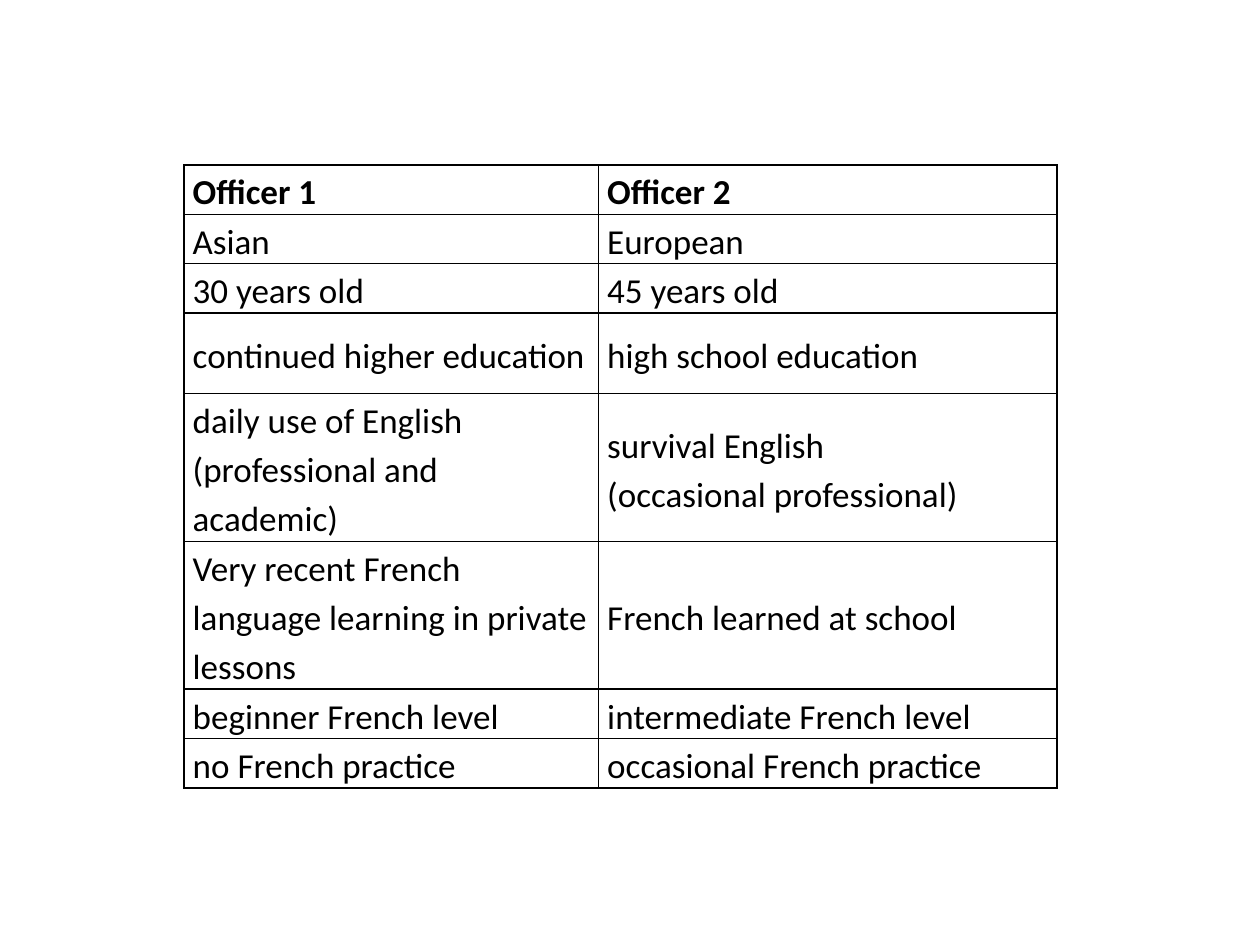
from lxml.etree import SubElement
from pptx import Presentation
from pptx.dml.color import RGBColor
from pptx.enum.text import MSO_ANCHOR
from pptx.oxml.ns import qn
from pptx.util import Inches, Pt

BLACK = RGBColor(0, 0, 0)
FONT = "Calibri"
OFFICERS = [
    ("Officer 1", "Officer 2"),
    ("Asian", "European"),
    ("30 years old", "45 years old"),
    ("continued higher education", "high school education"),
    ("daily use of English\n(professional and academic)",
     "survival English\n(occasional professional)"),
    ("Very recent French language learning in private lessons",
     "French learned at school"),
    ("beginner French level", "intermediate French level"),
    ("no French practice", "occasional French practice"),
]
ROW_LINES = [1, 1, 1, 2, 3, 3, 1, 1]
LINE_HEIGHT = Inches(0.32)
COLUMN_WIDTHS = [Inches(3.29), Inches(3.64)]
TABLE_HEIGHT = Inches(4.7)


def write_text(cell, text, size=20, bold=False, color=BLACK, spacing=1.15):
    cell.text_frame.text = text
    for paragraph in cell.text_frame.paragraphs:
        paragraph.line_spacing = spacing
        font = paragraph.runs[0].font
        font.name, font.size, font.bold = FONT, Pt(size), bold
        font.color.rgb = color


def format_cell(cell):
    cell.vertical_anchor = MSO_ANCHOR.MIDDLE
    cell.margin_left = cell.margin_right = Inches(0.07)
    cell.margin_top = cell.margin_bottom = 0
    properties = cell._tc.get_or_add_tcPr()
    for side in ("lnL", "lnR", "lnT", "lnB"):
        border = SubElement(properties, qn(f"a:{side}"), w=str(Pt(1)))
        fill = SubElement(border, qn("a:solidFill"))
        SubElement(fill, qn("a:srgbClr"), val=str(BLACK))
    cell.fill.background()


def main():
    presentation = Presentation()
    presentation.slide_width, presentation.slide_height = Inches(10), Inches(7.5)
    slide = presentation.slides.add_slide(presentation.slide_layouts[6])
    frame = slide.shapes.add_table(
        len(OFFICERS), len(COLUMN_WIDTHS), Inches(1.46), Inches(1.31),
        sum(COLUMN_WIDTHS), TABLE_HEIGHT)
    table = frame.table
    table.horz_banding = False
    for column, width in zip(table.columns, COLUMN_WIDTHS):
        column.width = width
    for row, lines, texts in zip(table.rows, ROW_LINES, OFFICERS):
        row.height = LINE_HEIGHT * lines
        for cell, text in zip(row.cells, texts):
            write_text(cell, text, bold=texts is OFFICERS[0])
            format_cell(cell)
    frame.height = TABLE_HEIGHT
    presentation.save("out.pptx")


if __name__ == "__main__":
    main()
